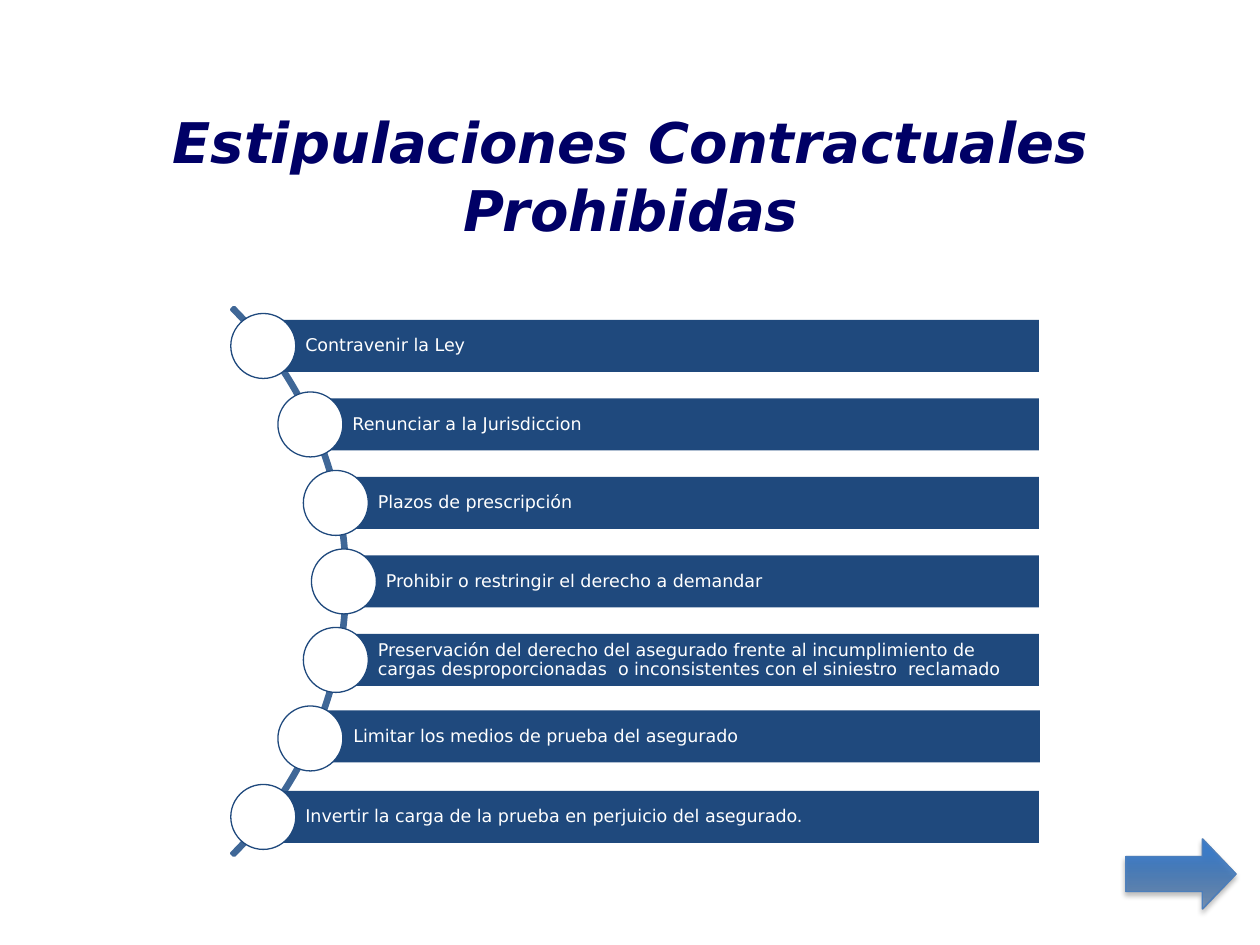
"""Build a slide listing prohibited contract terms along an arc."""
from math import sqrt

from lxml import etree
from pptx import Presentation
from pptx.dml.color import RGBColor
from pptx.enum.shapes import MSO_SHAPE
from pptx.enum.text import MSO_ANCHOR, PP_ALIGN
from pptx.util import Emu, Pt

TITLE = "Estipulaciones Contractuales Prohibidas"
TERMS = [
    "Contravenir la Ley",
    "Renunciar a la Jurisdiccion",
    "Plazos de prescripción",
    "Prohibir o restringir el derecho a demandar",
    "Preservación del derecho del asegurado frente al incumplimiento de "
    "cargas desproporcionadas  o inconsistentes con el siniestro  reclamado",
    "Limitar los medios de prueba del asegurado",
    "Invertir la carga de la prueba en perjuicio del asegurado.",
]
NUDGES = {5: (1, -2)}
COLORS = {"title": "000066", "bar": "1F497D", "arc": "3F6797",
          "white": "FFFFFF", "arrow_line": "4B7EBC"}
FONT = "DejaVu Sans"
EMU_PER_PX = 914400 // 126
ARC_X, ARC_Y, ARC_SIZE, NODE_RADIUS = -40, 581.5, 775, 384
STEP, BAR_RIGHT, BAR_HEIGHT, DOT = 78.5, 1039, 52, 65
BLOCK_ARC, RECT = MSO_SHAPE.BLOCK_ARC, MSO_SHAPE.RECTANGLE
OVAL, ARROW = MSO_SHAPE.OVAL, MSO_SHAPE.RIGHT_ARROW
MIDDLE, LEFT, CENTER = MSO_ANCHOR.MIDDLE, PP_ALIGN.LEFT, PP_ALIGN.CENTER
DRAWING = "http://schemas.openxmlformats.org/drawingml/2006/main"
GRADIENT = f"""<a:gradFill xmlns:a="{DRAWING}" rotWithShape="1"><a:gsLst>
<a:gs pos="0"><a:srgbClr val="2F5F99"><a:alpha val="54000"/></a:srgbClr></a:gs>
<a:gs pos="80000"><a:srgbClr val="3D7CC7"/></a:gs>
<a:gs pos="100000"><a:srgbClr val="3A7CCB"/></a:gs>
</a:gsLst><a:lin ang="16200000" scaled="0"/></a:gradFill>"""
SHADOW = f"""<a:effectLst xmlns:a="{DRAWING}">
<a:outerShdw blurRad="39400" dist="22900" dir="5400000" rotWithShape="0">
<a:srgbClr val="000000"><a:alpha val="35000"/></a:srgbClr>
</a:outerShdw></a:effectLst>"""


def px(value):
    return Emu(round(value * EMU_PER_PX))


def color(name):
    return RGBColor.from_string(COLORS[name])


def add_shape(page, kind, at, fill=None, line=None, width=0.75):
    shape = page.shapes.add_shape(kind, *map(px, at))
    shape.shadow.inherit = False
    if fill:
        shape.fill.solid()
        shape.fill.fore_color.rgb = color(fill)
    else:
        shape.fill.background()
    if line:
        shape.line.color.rgb = color(line)
        shape.line.width = Pt(width)
    else:
        shape.line.fill.background()
    return shape


def write(box, text, size, ink, align, strong=False):
    frame = box.text_frame
    frame.word_wrap = True
    frame.vertical_anchor = MIDDLE
    para = frame.paragraphs[0]
    para.alignment = align
    span = para.add_run()
    span.text = text
    span.font.name = FONT
    span.font.size = Pt(size)
    span.font.bold = span.font.italic = strong
    span.font.color.rgb = color(ink)
    return frame


def add_term(page, index, text):
    offset = (index - (len(TERMS) - 1) / 2) * STEP
    x = ARC_X + sqrt(NODE_RADIUS ** 2 - offset ** 2)
    y = ARC_Y + offset
    dx, dy = NUDGES.get(index, (0, 0))
    bar = add_shape(page, RECT, (x + dx, y - BAR_HEIGHT / 2 + dy,
                                 BAR_RIGHT - x, BAR_HEIGHT), "bar")
    frame = write(bar, text, 10, "white", LEFT)
    frame.paragraphs[0].line_spacing = 0.9
    frame.margin_left = px(42)
    frame.margin_top = frame.margin_right = frame.margin_bottom = px(4)
    add_shape(page, OVAL, (x - DOT / 2, y - DOT / 2, DOT, DOT), "white", "bar")


def add_next_arrow(page):
    arrow = add_shape(page, ARROW, (1126, 839, 110, 70), "bar", "arrow_line")
    arrow.adjustments[1] = 0.48
    props = arrow._element.spPr
    for tag, xml in (("solidFill", GRADIENT), ("effectLst", SHADOW)):
        props.replace(props.find(f"{{{DRAWING}}}{tag}"), etree.fromstring(xml))


def main():
    deck = Presentation()
    deck.slide_width, deck.slide_height = px(1260), px(945)
    page = deck.slides.add_slide(deck.slide_layouts[6])
    title = page.shapes.add_textbox(*map(px, (64, 96, 1134, 158)))
    write(title, TITLE, 32, "title", CENTER, strong=True)
    arc = add_shape(page, BLOCK_ARC, (ARC_X - ARC_SIZE / 2, ARC_Y - ARC_SIZE / 2,
                                      ARC_SIZE, ARC_SIZE), line="arc", width=2)
    for index, value in enumerate((189, 27, 0.004)):
        arc.adjustments[index] = value
    for index, text in enumerate(TERMS):
        add_term(page, index, text)
    add_next_arrow(page)
    deck.save("out.pptx")


if __name__ == "__main__":
    main()
